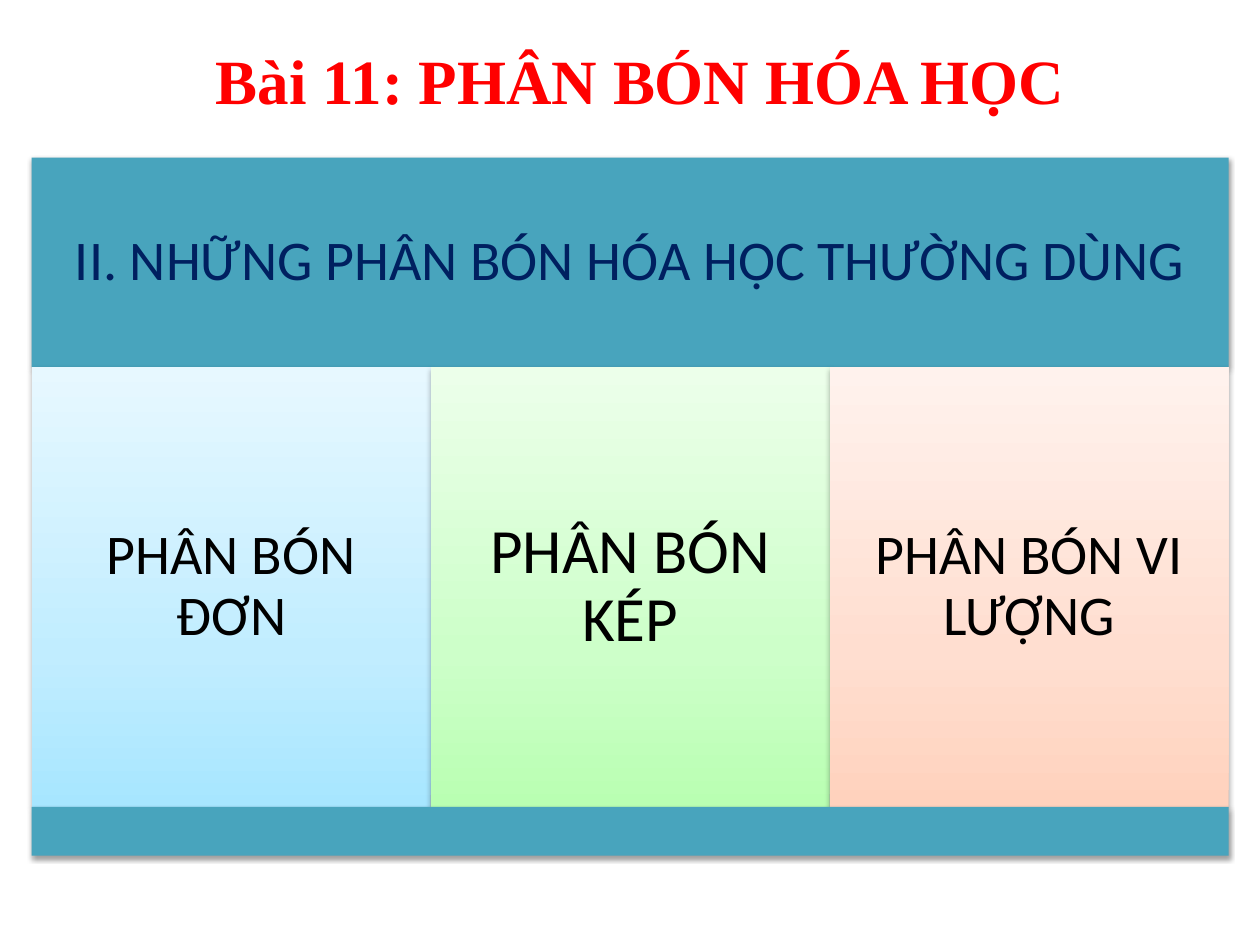
import copy

import lxml.etree
import pptx
import pptx.dml.color
import pptx.enum.shapes
import pptx.enum.text
import pptx.oxml
import pptx.oxml.ns
import pptx.util
from pptx.util import Cm, Pt

TEAL, NAVY, RED, BLACK = "48A4BD", "002060", "FF0000", "000000"
HEADER_SHARE, COLUMN_SHARE = 0.3, 0.63
FERTILIZERS = [
    ("PHÂN BÓN ĐƠN", 32, ["A7E6FF", "C1EDFF", "E7F8FF"]),
    ("PHÂN BÓN KÉP", 36, ["B9FFB2", "CDFFC9", "ECFFEA"]),
    ("PHÂN BÓN VI LƯỢNG", 32, ["FFD2BD", "FFDED0", "FFF2ED"]),
]
SHADOW_XML = (
    f'<a:outerShdw {pptx.oxml.ns.nsdecls("a")} blurRad="40000" dist="20000" '
    'dir="5400000" rotWithShape="0"><a:srgbClr val="000000">'
    '<a:alpha val="38000"/></a:srgbClr></a:outerShdw>'
)


def rgb(hex_colour):
    return pptx.dml.color.RGBColor.from_string(hex_colour)


def format_text(frame, text, size, colour, font_name, bold=False):
    frame.text = text
    frame.word_wrap = True
    frame.vertical_anchor = pptx.enum.text.MSO_ANCHOR.MIDDLE
    paragraph = frame.paragraphs[0]
    paragraph.alignment = pptx.enum.text.PP_ALIGN.CENTER
    font = paragraph.runs[0].font
    font.name, font.size, font.bold = font_name, Pt(size), bold
    font.color.rgb = rgb(colour)


def fill_gradient(shape, colours):
    """Blend three colours from the bottom edge to the top."""
    shape.fill.gradient()
    shape.fill.gradient_angle = 90
    stop_list = shape._element.spPr.find(".//" + pptx.oxml.ns.qn("a:gsLst"))
    stop_list.insert(1, copy.deepcopy(stop_list[0]))
    for stop, position, colour in zip(shape.fill.gradient_stops, (0, 0.35, 1), colours):
        stop.position = position
        stop.color.rgb = rgb(colour)


def add_panel(slide, left, top, width, height, colours):
    """Add a borderless rectangle with a soft shadow below it."""
    panel = slide.shapes.add_shape(
        pptx.enum.shapes.MSO_SHAPE.RECTANGLE, left, top, width, height)
    if len(colours) == 1:
        panel.fill.solid()
        panel.fill.fore_color.rgb = rgb(colours[0])
    else:
        fill_gradient(panel, colours)
    panel.line.fill.background()
    panel.shadow.inherit = False
    effects = panel._element.spPr.find(pptx.oxml.ns.qn("a:effectLst"))
    effects.append(pptx.oxml.parse_xml(SHADOW_XML))
    return panel


def label_panel(panel, text, size, colour):
    frame = panel.text_frame
    inset = Cm(size * 0.0106)
    frame.margin_left = frame.margin_right = inset
    frame.margin_top = frame.margin_bottom = inset
    format_text(frame, text, size, colour, "Calibri")
    frame.paragraphs[0].line_spacing = 0.9


def add_title(slide, left, top, width, height):
    title = slide.shapes.title
    title.left, title.top, title.width, title.height = left, top, width, height
    format_text(title.text_frame, "Bài 11: PHÂN BÓN HÓA HỌC", 36, RED,
                "Times New Roman", bold=True)


def add_fertilizer_chart(slide, left, top, width, height):
    """Stack a header, a row of equal columns and a footer bar."""
    header_height = int(height * HEADER_SHARE)
    column_height = int(height * COLUMN_SHARE)
    column_width = width // len(FERTILIZERS)
    columns_top = top + header_height
    footer_top = columns_top + column_height

    header = add_panel(slide, left, top, width, header_height, [TEAL])
    label_panel(header, "II. NHỮNG PHÂN BÓN HÓA HỌC THƯỜNG DÙNG", 32, NAVY)
    for index, (name, size, colours) in enumerate(FERTILIZERS):
        column = add_panel(slide, left + index * column_width, columns_top,
                           column_width, column_height, colours)
        label_panel(column, name, size, BLACK)
    add_panel(slide, left, footer_top, width, top + height - footer_top, [TEAL])


def main():
    presentation = pptx.Presentation()
    presentation.slide_width, presentation.slide_height = Cm(25.4), Cm(19.05)
    slide = presentation.slides.add_slide(presentation.slide_layouts[5])
    add_fertilizer_chart(slide, Cm(0.64), Cm(3.18), Cm(24.13), Cm(14.07))
    add_title(slide, Cm(1.48), Cm(0), Cm(22.86), Cm(3.18))
    presentation.save("out.pptx")


if __name__ == "__main__":
    main()
